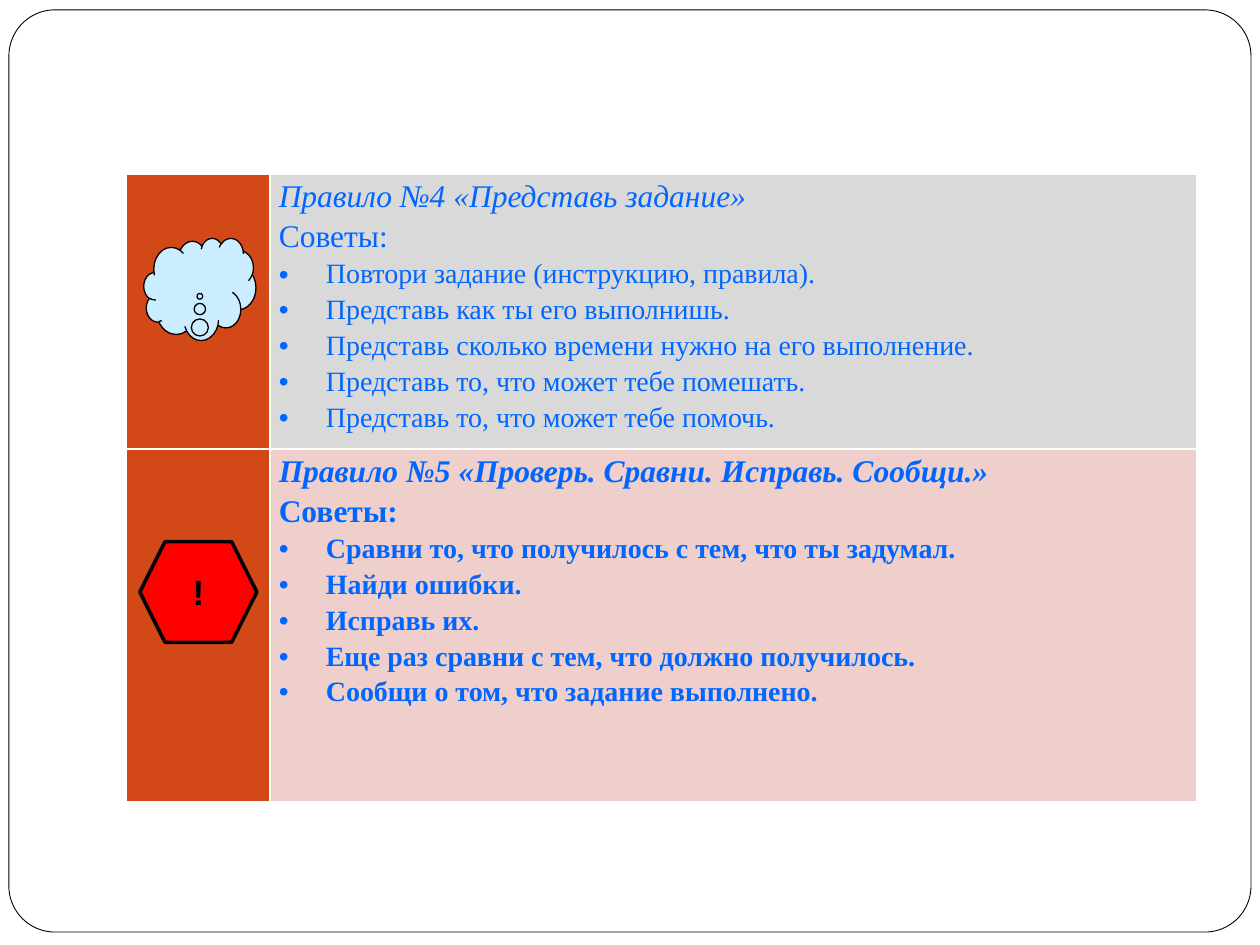
from lxml.etree import SubElement
from pptx import Presentation
from pptx.dml.color import RGBColor
from pptx.enum.shapes import MSO_SHAPE
from pptx.enum.text import MSO_ANCHOR, PP_ALIGN
from pptx.oxml.ns import qn
from pptx.util import Cm, Pt

RULES = [
    ("Правило №4 «Представь задание»", "D9D9D9", False, [
        "Повтори задание (инструкцию, правила).",
        "Представь как ты его выполнишь.",
        "Представь сколько времени нужно на его выполнение.",
        "Представь то, что может тебе помешать.",
        "Представь то, что может тебе помочь.",
    ]),
    ("Правило №5 «Проверь. Сравни. Исправь. Сообщи.»", "EFCFCC", True, [
        "Сравни то, что получилось с тем, что ты задумал.",
        "Найди ошибки.",
        "Исправь их.",
        "Еще раз сравни с тем, что должно получилось.",
        "Сообщи о том, что задание выполнено.",
    ]),
]


def color(hex_string):
    return RGBColor.from_string(hex_string)


class RuleSlide:
    text_font = "Times New Roman"
    text_color = "0066FF"
    outline = "000000"
    border = "FFFFFF"
    icon_fill = "D34817"
    indent = Cm(0.95)

    def __init__(self, presentation):
        self.slide = presentation.slides.add_slide(presentation.slide_layouts[6])

    def shape(self, preset, left, top, width, height, fill, line_width, adjustments):
        figure = self.slide.shapes.add_shape(
            preset, Cm(left), Cm(top), Cm(width), Cm(height))
        figure.shadow.inherit = False
        figure.fill.solid()
        figure.fill.fore_color.rgb = color(fill)
        figure.line.color.rgb = color(self.outline)
        figure.line.width = Pt(line_width)
        for index, value in enumerate(adjustments):
            figure.adjustments[index] = value
        return figure

    def label(self, figure, text):
        frame = figure.text_frame
        frame.text = text
        frame.vertical_anchor = MSO_ANCHOR.MIDDLE
        frame.paragraphs[0].alignment = PP_ALIGN.CENTER
        self.format(frame.paragraphs[0], 20, "Arial", self.outline, bold=True)

    def format(self, paragraph, size, font_name, font_color, bold=False, italic=False):
        for run in paragraph.runs:
            run.font.size = Pt(size)
            run.font.name = font_name
            run.font.color.rgb = color(font_color)
            run.font.bold = bold
            run.font.italic = italic

    def bullet(self, paragraph):
        properties = paragraph._p.get_or_add_pPr()
        properties.set("marL", str(self.indent))
        properties.set("indent", str(-self.indent))
        SubElement(properties, qn("a:buFont"), typeface="Arial")
        SubElement(properties, qn("a:buChar"), char="•")

    def paint_cell(self, cell, fill):
        """Give the cell its borders, then its fill, in schema order."""
        properties = cell._tc.get_or_add_tcPr()
        for side in ("a:lnL", "a:lnR", "a:lnT", "a:lnB"):
            edge = SubElement(properties, qn(side), w=str(Pt(1)))
            SubElement(SubElement(edge, qn("a:solidFill")), qn("a:srgbClr"), val=self.border)
        cell.fill.solid()
        cell.fill.fore_color.rgb = color(fill)

    def write_rule(self, cell, title, tips, bold):
        cell.margin_left = cell.margin_right = Cm(0.18)
        cell.margin_top = cell.margin_bottom = 0
        cell.text_frame.text = "\n".join([title, "Советы:", *tips])
        for index, paragraph in enumerate(cell.text_frame.paragraphs):
            is_tip = index > 1
            paragraph.line_spacing = 1.15
            self.format(paragraph, 16 if is_tip else 18, self.text_font,
                        self.text_color, bold=bold, italic=index == 0)
            if is_tip:
                self.bullet(paragraph)

    def rule_table(self, left, top, widths, heights, rules):
        table = self.slide.shapes.add_table(
            len(rules), len(widths), Cm(left), Cm(top),
            Cm(sum(widths)), Cm(sum(heights))).table
        for column, width in zip(table.columns, widths):
            column.width = Cm(width)
        for row, height, (title, fill, bold, tips) in zip(table.rows, heights, rules):
            row.height = Cm(height)
            icon_cell, rule_cell = row.cells
            self.paint_cell(icon_cell, self.icon_fill)
            self.paint_cell(rule_cell, fill)
            self.write_rule(rule_cell, title, tips, bold)


def main():
    presentation = Presentation()
    presentation.slide_width = Cm(25.4)
    presentation.slide_height = Cm(19.05)

    page = RuleSlide(presentation)
    page.shape(MSO_SHAPE.ROUNDED_RECTANGLE, 0.18, 0.2, 25.04, 18.59, "FFFFFF", 0.5, [0.05])
    page.rule_table(2.54, 3.51, [2.9, 18.69], [5.54, 7.11], RULES)
    page.shape(MSO_SHAPE.CLOUD_CALLOUT, 2.9, 4.8, 2.26, 2.06, "CCECFF", 0.75, [0, 0.07])
    warning = page.shape(MSO_SHAPE.HEXAGON, 2.82, 10.92, 2.36, 2.03, "FF0000", 2, [0.25])
    page.label(warning, "!")

    presentation.save("out.pptx")


if __name__ == "__main__":
    main()
